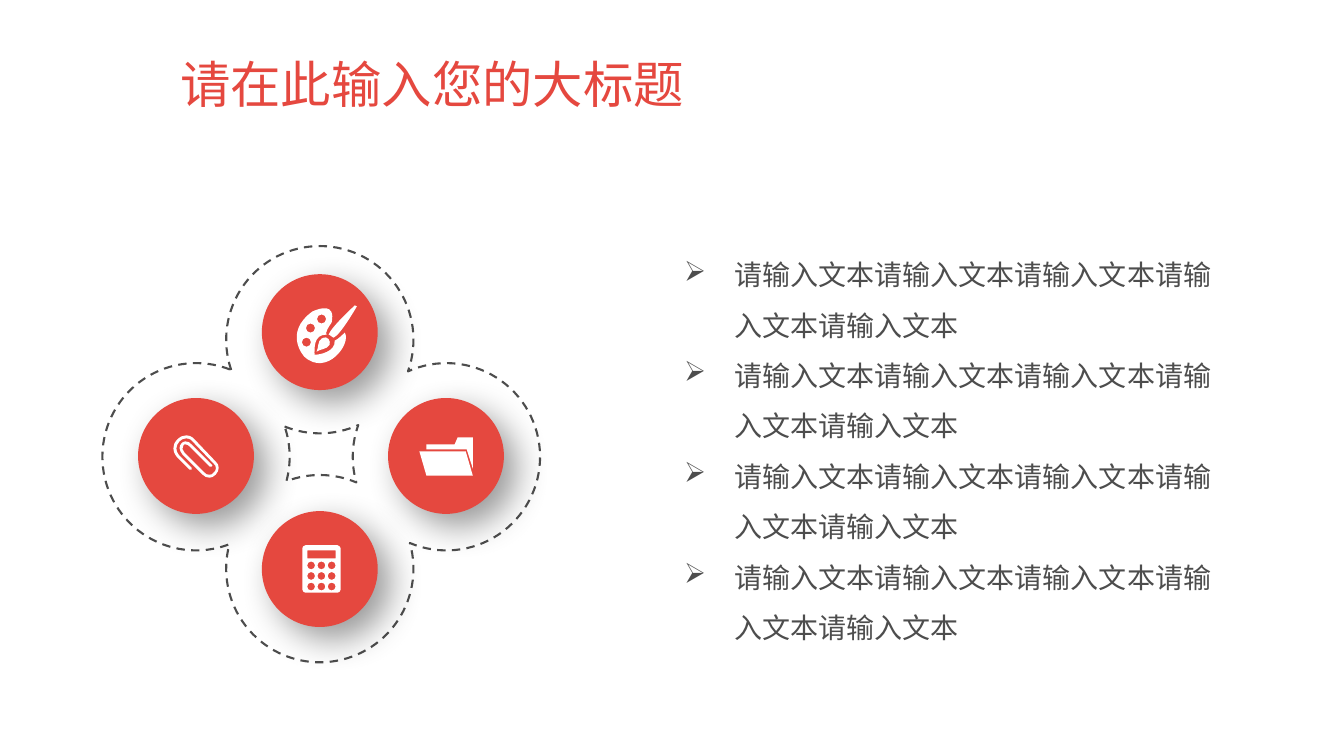
import math
import pptx
import pptx.util
import pptx.dml.color
import pptx.enum.dml
import pptx.enum.shapes
import pptx.enum.text
import pptx.oxml
import pptx.oxml.ns

Cm = pptx.util.Cm
Pt = pptx.util.Pt
RED, GREY, WHITE = "E5483F", "4D4D4D", "FFFFFF"
FACE = "Noto Sans CJK SC"
TITLE = "请在此输入您的大标题"
ITEMS = ["请输入文本" * 5] * 4

PETALS = [(8.06, 8.56), (11.25, 11.51), (8.06, 14.33), (4.94, 11.51)]
RADIUS = 2.36
DISCS = [(6.6, 6.91), (9.78, 10.03), (3.48, 10.03), (6.6, 12.88)]
DISC = 2.92

GRID = 0.0254
BRUSH = [
    [(51, 38), (52, 49, 36, 52, 31, 52), (31, 45, 30, 32, 43, 32),
     (41, 31, 45, 24, 48, 20), (52, 0, 36, 6, 29, 9),
     (0, 30, 20, 53, 21, 54), (43, 74, 68, 41, 61, 30),
     (60, 31, 54, 37, 51, 38)],
    [(50, 35), (57, 32, 73, 4, 73, 4), (71, 3),
     (71, 3, 48, 24, 45, 32), (46, 32, 49, 35, 50, 35)],
    [(38, 36), (34, 38, 35, 46, 33, 49), (37, 46, 43, 47, 46, 42),
     (47, 39, 45, 32, 38, 36)],
]
PAINTS = [(38, 16.5), (23, 39.5), (27, 25.5)]
CLIP = [
    [(13, 0), (18, 0, 21, 4, 21, 4), (42, 26), (46, 29, 46, 35, 42, 39),
     (40, 41, 38, 42, 36, 42), (33, 42, 31, 41, 29, 39), (9, 19),
     (6, 15, 5, 11, 8, 8), (9, 7, 10, 6, 12, 6), (14, 6, 17, 7, 18, 9),
     (38, 29), (39, 30, 39, 30, 38, 31), (36, 31), (16, 11),
     (15, 10, 14, 9, 12, 9), (11, 9, 10, 9, 10, 10),
     (8, 12, 9, 15, 11, 17), (31, 37), (32, 39, 34, 39, 36, 39),
     (37, 39, 39, 39, 40, 37), (43, 35, 43, 30, 40, 28), (19, 6),
     (19, 6, 17, 3, 13, 3), (10, 3, 8, 4, 6, 6), (4, 8, 3, 11, 3, 13),
     (3, 17, 6, 20, 6, 20), (18, 32), (18, 32, 18, 33, 18, 34), (16, 34),
     (4, 22), (4, 22, 0, 18, 0, 13), (0, 10, 1, 7, 4, 4),
     (7, 1, 10, 0, 13, 0)],
]
FOLDER = [
    [(0, 14), (46, 14), (53, 38), (7, 38)],
    [(38, 0), (53, 0), (53, 31), (47, 12), (7, 12), (7, 7), (35, 7)],
]
PANEL = [
    [(3, 0), (35, 0), (36, 0, 38, 2, 38, 3), (38, 44),
     (38, 46, 36, 47, 35, 47), (3, 47), (2, 47, 0, 46, 0, 44), (0, 3),
     (0, 2, 1, 0, 3, 0)],
    [(5, 5), (33, 5), (33, 13), (5, 13)],
]


def color(code):
    return pptx.dml.color.RGBColor.from_string(code)


def add_xml(parent, tag, body="", **attrs):
    words = " ".join(f'{key}="{val}"' for key, val in attrs.items())
    space = pptx.oxml.ns.nsdecls("a")
    child = pptx.oxml.parse_xml(f"<a:{tag} {space} {words}>{body}</a:{tag}>")
    parent.append(child)
    return child


def write(slide, lines, left, top, width, height, size=20, tint=GREY,
          space=1.0, mark=None, hang=0):
    box = slide.shapes.add_textbox(Cm(left), Cm(top), Cm(width), Cm(height))
    frame = box.text_frame
    frame.word_wrap = True
    frame.vertical_anchor = pptx.enum.text.MSO_ANCHOR.MIDDLE
    for num, line in enumerate(lines):
        para = frame.add_paragraph() if num else frame.paragraphs[0]
        para.line_spacing = space
        if mark:
            props = para._p.get_or_add_pPr()
            props.set("marL", str(Cm(hang)))
            props.set("indent", str(-Cm(hang)))
            add_xml(props, "buChar", char=mark)
        run = para.add_run()
        run.text = line
        run.font.size = Pt(size)
        run.font.name = FACE
        run.font.color.rgb = color(tint)
        add_xml(run._r.get_or_add_rPr(), "ea", typeface=FACE)


def arc(center, radius, start, end, count=4):
    step = (end - start) / count
    pull = 4 / 3 * math.tan(step / 4)

    def spot(turn, side=0):
        return (center[0] + radius * (math.cos(turn) - side * math.sin(turn)),
                center[1] + radius * (math.sin(turn) + side * math.cos(turn)))

    turns = [start + step * k for k in range(count)]
    return [spot(start)] + [
        spot(t, pull) + spot(t + step, -pull) + spot(t + step) for t in turns]


def meet(here, there):
    dx, dy = there[0] - here[0], there[1] - here[1]
    return math.atan2(dy, dx), math.acos(math.hypot(dx, dy) / 2 / RADIUS)


def clover():
    outer, inner = [], []
    for num, petal in enumerate(PETALS):
        back, lap = meet(petal, PETALS[num - 1])
        front, gap = meet(petal, PETALS[(num + 1) % len(PETALS)])
        front += 2 * math.pi * math.ceil((back - front) / 2 / math.pi)
        outer += arc(petal, RADIUS, back + lap, front - gap)
        inner += arc(petal, RADIUS, back - lap,
                     front - 2 * math.pi + gap, count=1)
    return [outer, inner]


def trace(slide, loops):
    pen = None
    for loop in loops:
        dots = [(Cm(part[k]), Cm(part[k + 1]))
                for part in loop for k in range(0, len(part), 2)]
        if pen:
            pen.move_to(*dots[0])
        else:
            pen = slide.shapes.build_freeform(*dots[0], scale=1.0)
        pen.add_line_segments(dots[1:], close=True)
    shape = pen.convert_to_shape()
    shape.shadow.inherit = False
    route = shape._element.find(".//" + pptx.oxml.ns.qn("a:path"))
    steps = iter(list(route))
    for loop in loops:
        for part in loop:
            step = next(steps)
            if len(part) == 6:
                curve = add_xml(route, "cubicBezTo")
                step.addprevious(curve)
                for leg in (step, next(steps), next(steps)):
                    curve.append(leg[0])
                    route.remove(leg)
        next(steps)
    return shape


def fill(shape, tint):
    shape.fill.solid()
    shape.fill.fore_color.rgb = color(tint)
    shape.line.fill.background()


def icon(slide, left, top, paths):
    base = (left, top)
    loops = [[tuple(base[k % 2] + val * GRID for k, val in enumerate(part))
              for part in path] for path in paths]
    fill(trace(slide, loops), WHITE)


def main():
    deck = pptx.Presentation()
    deck.slide_width, deck.slide_height = Cm(33.87), Cm(19.05)
    slide = deck.slides.add_slide(deck.slide_layouts[6])
    write(slide, [TITLE], 4.29, 1.02, 26.52, 2.36,
          size=36, tint=RED, space=0.9)

    ring = trace(slide, clover())
    ring.fill.background()
    ring.line.color.rgb = color(GREY)
    ring.line.width = Pt(1.5)
    ring.line.dash_style = pptx.enum.dml.MSO_LINE.DASH

    shade = '<a:srgbClr val="000000"><a:alpha val="40000"/></a:srgbClr>'
    for left, top in DISCS:
        disc = slide.shapes.add_shape(
            pptx.enum.shapes.MSO_SHAPE.OVAL,
            Cm(left), Cm(top), Cm(DISC), Cm(DISC))
        fill(disc, RED)
        disc.shadow.inherit = False
        glow = disc._element.spPr.find(pptx.oxml.ns.qn("a:effectLst"))
        add_xml(glow, "outerShdw", shade, blurRad=Pt(25), dist=Pt(13),
                dir=45 * 60000, algn="tl", rotWithShape=0)

    full = 2 * math.pi
    paints = [arc(spot, 4.5, 0, full) for spot in PAINTS]
    keys = [arc((8.7 + 10.2 * col, 20 + 10.5 * row), 3.9, 0, full)
            for row in range(3) for col in range(3)]
    icon(slide, 7.14, 7.62, BRUSH + paints)
    write(slide, ITEMS, 16.99, 4.7, 14.07, 12.9,
          space=1.5, mark="➢", hang=1.27)
    icon(slide, 4.37, 10.97, CLIP)
    icon(slide, 10.57, 11.02, FOLDER)
    icon(slide, 7.62, 13.74, PANEL + keys)
    deck.save("out.pptx")


if __name__ == "__main__":
    main()
